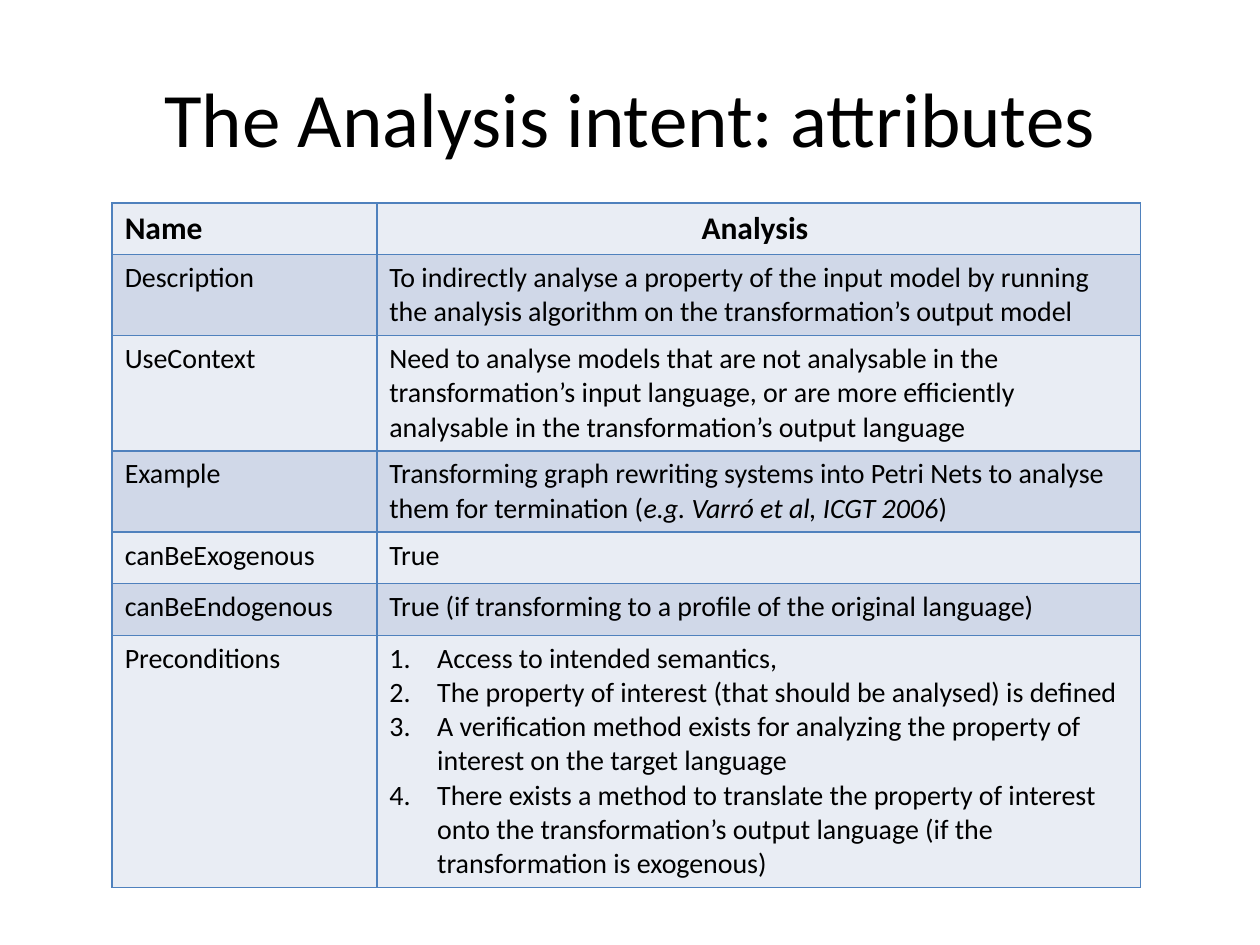
from pptx import Presentation
from pptx.dml.color import RGBColor
from pptx.enum.text import MSO_ANCHOR, PP_ALIGN
from pptx.oxml import parse_xml
from pptx.oxml.ns import nsdecls
from pptx.util import Inches, Pt

CENTER = PP_ALIGN.CENTER
MIDDLE = MSO_ANCHOR.MIDDLE
FONT = "Calibri"
TITLE_ONLY = 5
COLORS = {"text": "000000", "border": "4F81BD", "light": "E9EDF4", "dark": "D0D8E8"}

# Each value is a list of paragraphs; text between asterisks is italic
ATTRIBUTES = [
    ("Name", ["Analysis "]),
    ("Description", ["To indirectly analyse a property of the input model by running "
                     "the analysis algorithm on the transformation’s output model"]),
    ("UseContext", ["Need to analyse models that are not analysable in the "
                    "transformation’s input language, or are more efficiently "
                    "analysable in the transformation’s output language"]),
    ("Example", ["Transforming graph rewriting systems into Petri Nets to analyse "
                 "them for termination (*e.g. Varró et al, ICGT 2006*)"]),
    ("canBeExogenous", ["True"]),
    ("canBeEndogenous", ["True (if transforming to a profile of the original language)"]),
    ("Preconditions", [
        "Access to intended semantics,",
        "The property of interest (that should be analysed) is defined",
        "A verification method exists for analyzing the property of interest "
        "on the target language",
        "There exists a method to translate the property of interest onto the "
        "transformation’s output language (if the transformation is exogenous)"]),
]


def rgb(name):
    return RGBColor.from_string(COLORS[name])


def set_font(p, size, bold=None):
    p.font.name = FONT
    p.font.size = Pt(size)
    p.font.bold = bold
    p.font.color.rgb = rgb("text")


def number_paragraph(p):
    pPr = p._p.get_or_add_pPr()
    pPr.set("marL", str(Inches(0.38)))
    pPr.set("indent", str(-Inches(0.38)))
    pPr.insert(0, parse_xml(f'<a:buFont {nsdecls("a")} typeface="+mj-lt"/>'))
    pPr.insert(1, parse_xml(f'<a:buAutoNum {nsdecls("a")} type="arabicPeriod"/>'))


def set_borders(cell):
    tcPr = cell._tc.get_or_add_tcPr()
    for i, side in enumerate("LRTB"):
        tcPr.insert(i, parse_xml(
            f'<a:ln{side} {nsdecls("a")} w="{Pt(1)}"><a:solidFill>'
            f'<a:srgbClr val="{COLORS["border"]}"/></a:solidFill></a:ln{side}>'))


def fill_cell(cell, paragraphs, fill, header):
    cell.fill.solid()
    cell.fill.fore_color.rgb = rgb(fill)
    set_borders(cell)
    tf = cell.text_frame
    for i, text in enumerate(paragraphs):
        p = tf.paragraphs[0] if i == 0 else tf.add_paragraph()
        for j, part in enumerate(text.split("*")):
            r = p.add_run()
            r.text = part
            if j % 2:
                r.font.italic = True
        set_font(p, 18 if header else 16, header)
        if len(paragraphs) > 1:
            number_paragraph(p)


def add_title(slide, text, left, top, width, height):
    sp = slide.shapes.title
    sp.left, sp.top, sp.width, sp.height = left, top, width, height
    tf = sp.text_frame
    tf.text = text
    tf.vertical_anchor = MIDDLE
    p = tf.paragraphs[0]
    p.alignment = CENTER
    set_font(p, 44)


def add_attribute_table(slide, left, top, width, height):
    table = slide.shapes.add_table(len(ATTRIBUTES), 2, left, top, width, height).table
    table.first_row = table.horz_banding = False
    name_width = Inches(2.1)
    table.columns[0].width = name_width
    table.columns[1].width = width - name_width
    for i, (name, value) in enumerate(ATTRIBUTES):
        fill = "dark" if i % 2 else "light"
        fill_cell(table.cell(i, 0), [name], fill, i == 0)
        fill_cell(table.cell(i, 1), value, fill, i == 0)
    table.cell(0, 1).text_frame.paragraphs[0].alignment = CENTER


def main():
    prs = Presentation()
    prs.slide_width, prs.slide_height = Inches(10), Inches(7.5)
    slide = prs.slides.add_slide(prs.slide_layouts[TITLE_ONLY])
    add_title(slide, "The Analysis intent: attributes",
              Inches(0.5), Inches(0.3), Inches(9), Inches(1.25))
    # Rows start at an equal height and grow with their text
    add_attribute_table(slide, Inches(0.89), Inches(1.61),
                        Inches(8.16), Inches(0.41) * len(ATTRIBUTES))
    prs.save("out.pptx")


if __name__ == "__main__":
    main()
